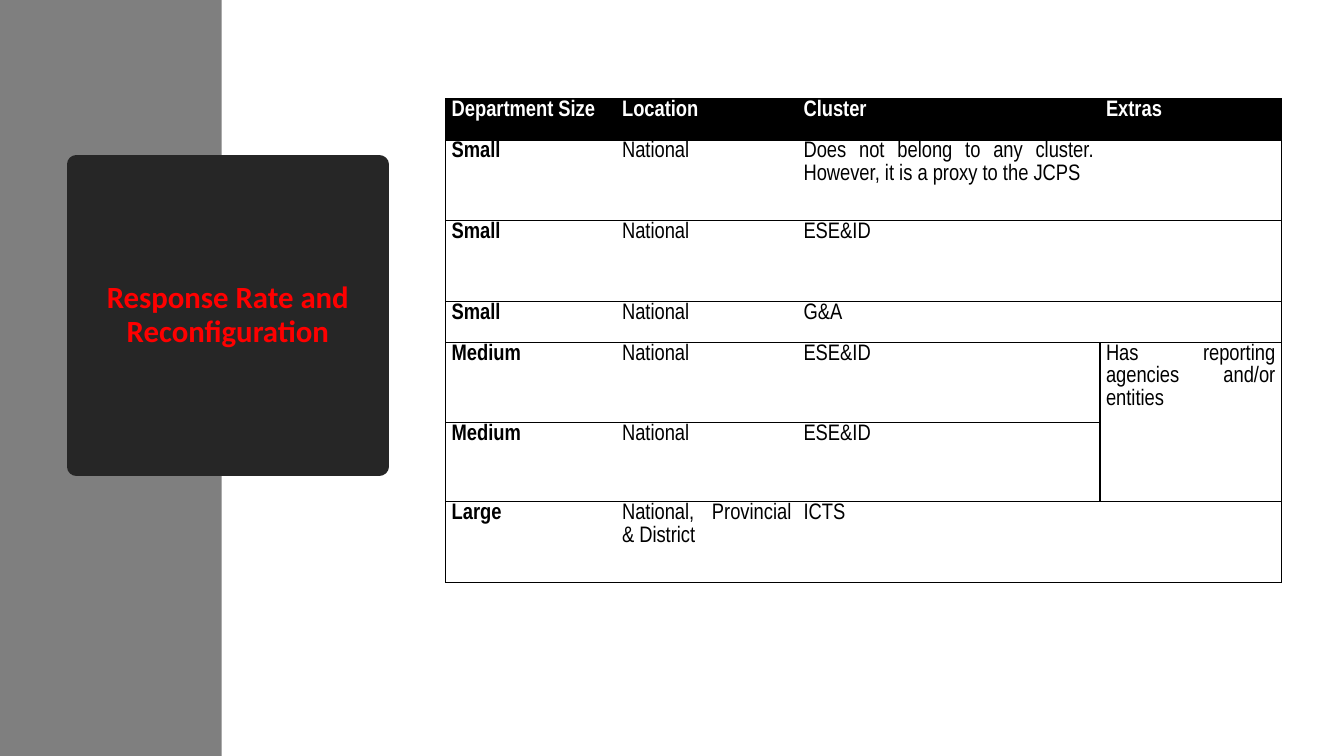
from lxml import etree
from pptx import Presentation
from pptx.dml.color import RGBColor
from pptx.enum.shapes import MSO_SHAPE
from pptx.enum.text import MSO_ANCHOR, PP_ALIGN
from pptx.oxml.ns import qn
from pptx.util import Inches, Pt

RECT = MSO_SHAPE.RECTANGLE
MIDDLE = MSO_ANCHOR.MIDDLE
CENTER, JUSTIFY = PP_ALIGN.CENTER, PP_ALIGN.JUSTIFY

COLORS = {"band": "7F7F7F", "card": "262626", "title": "FF0000",
          "ink": "000000", "paper": "FFFFFF"}
TITLE = "Response Rate and Reconfiguration"
ROWS = [
    ("Department Size", "Location", "Cluster", "Extras"),
    ("Small", "National",
     "Does not belong to any cluster. However, it is a proxy to the JCPS", ""),
    ("Small", "National", "ESE&ID", ""),
    ("Small", "National", "G&A", ""),
    ("Medium", "National", "ESE&ID", "Has reporting agencies and/or entities"),
    ("Medium", "National", "ESE&ID", ""),
    ("Large", "National, Provincial & District", "ICTS", ""),
]
WIDTHS = [1.69, 1.8, 3, 1.8]
HEIGHTS = [0.41, 0.8, 0.8, 0.41, 0.79, 0.79, 0.8]
SPAN = (4, 5)  # rows that share one Extras cell
LAST = len(WIDTHS) - 1


def color(name):
    return RGBColor.from_string(COLORS[name])


def paint(shape, name):
    shape.fill.solid()
    shape.fill.fore_color.rgb = color(name)


def style(para, font, size, name, bold, align, space):
    para.alignment = align
    para.line_spacing = space
    for run in para.runs:
        run.font.name = font
        run.font.size = Pt(size)
        run.font.bold = bold
        run.font.color.rgb = color(name)


def edge(cell, sides):
    """Draw the given sides of a cell and clear the others."""
    props = cell._tc.get_or_add_tcPr()
    for side in "LRTB":
        line = etree.SubElement(props, qn("a:ln" + side), w=str(Pt(1)))
        if side in sides:
            fill = etree.SubElement(line, qn("a:solidFill"))
            etree.SubElement(fill, qn("a:srgbClr"), val=COLORS["ink"])
        else:
            etree.SubElement(line, qn("a:noFill"))


def add_title(slide):
    title = slide.shapes.title
    title.left, title.top = Inches(0.76), Inches(1.63)
    title.width = title.height = Inches(3)
    paint(title, "card")
    title.line.color.rgb = color("card")
    title.line.width = Pt(13.75)
    frame = title.text_frame
    frame.text = TITLE
    frame.word_wrap = True
    frame.vertical_anchor = MIDDLE
    style(frame.paragraphs[0], "Calibri", 22, "title", True, CENTER, 0.9)
    return title


def add_band(slide, title):
    """Add the grey band behind the title."""
    band = slide.shapes.add_shape(RECT, 0, 0, Inches(2.2), Inches(7.5))
    band.shadow.inherit = False
    paint(band, "band")
    band.line.fill.background()
    title._element.addprevious(band._element)


def add_grid(slide):
    grid = slide.shapes.add_table(
        len(ROWS), len(WIDTHS), Inches(4.42), Inches(0.98),
        Inches(sum(WIDTHS)), Inches(sum(HEIGHTS))).table
    grid.first_row = grid.horz_banding = False
    for col, width in zip(grid.columns, WIDTHS):
        col.width = Inches(width)
    for row, height in zip(grid.rows, HEIGHTS):
        row.height = Inches(height)
    grid.cell(SPAN[0], LAST).merge(grid.cell(SPAN[1], LAST))

    for r, row in enumerate(ROWS):
        for c, text in enumerate(row):
            cell = grid.cell(r, c)
            sides = "TB"
            if c == 0 or (c == LAST and r in SPAN):
                sides += "L"
            if c == LAST or (c == LAST - 1 and r in SPAN):
                sides += "R"
            edge(cell, sides)
            head = r == 0
            paint(cell, "ink" if head else "paper")
            cell.margin_left = cell.margin_right = Inches(0.06)
            cell.margin_top = cell.margin_bottom = 0
            if text:
                cell.text_frame.text = text
                style(cell.text_frame.paragraphs[0], "Arial Narrow", 16,
                      "paper" if head else "ink", head or c == 0,
                      JUSTIFY, 1.07)


def main():
    deck = Presentation()
    deck.slide_width, deck.slide_height = Inches(13.33), Inches(7.5)
    slide = deck.slides.add_slide(deck.slide_layouts[5])
    add_band(slide, add_title(slide))
    add_grid(slide)
    deck.save("out.pptx")


if __name__ == "__main__":
    main()
